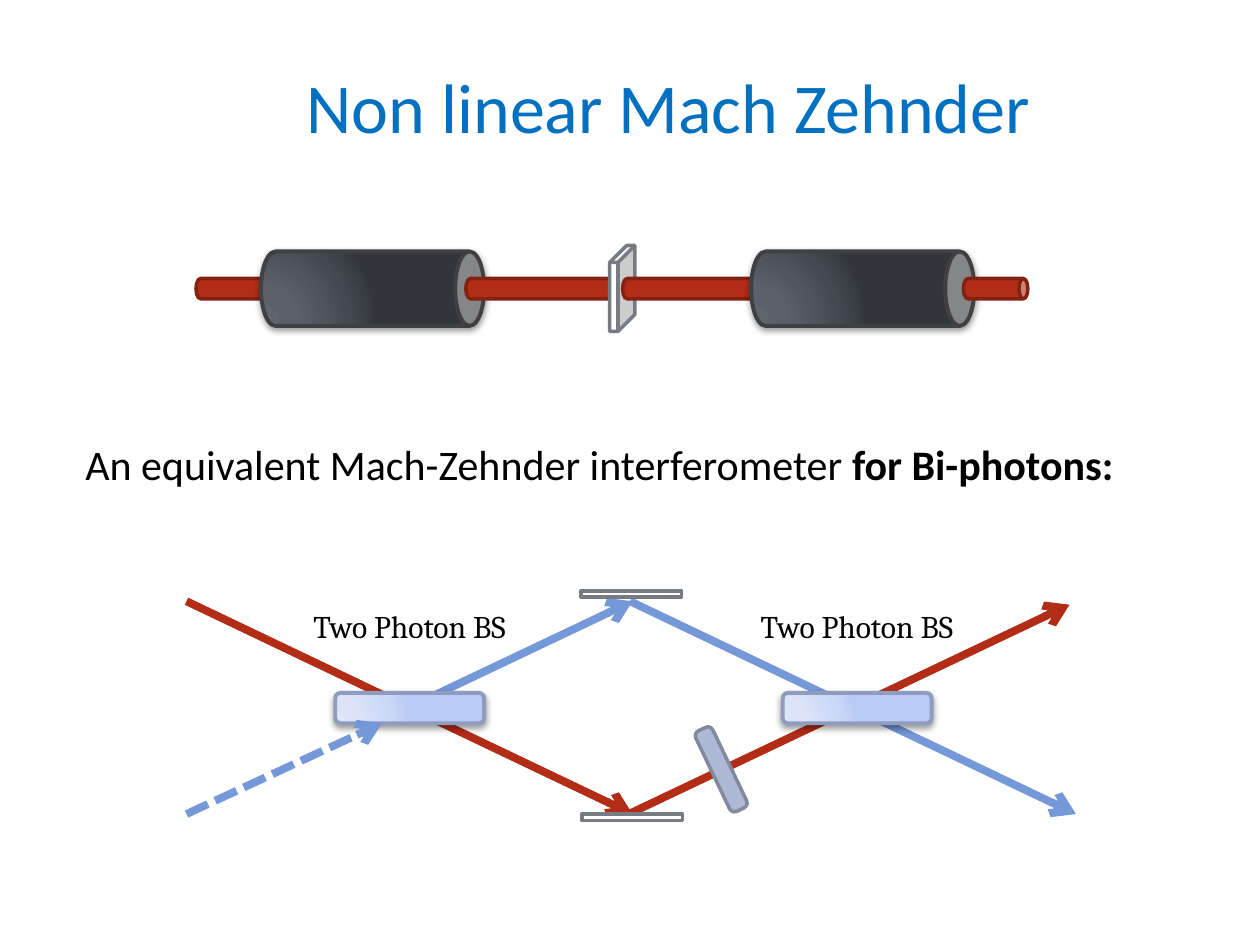
"""Build the slide on the non linear Mach Zehnder interferometer."""
import dataclasses

import lxml.etree
import pptx
import pptx.dml.color
import pptx.enum.dml
import pptx.enum.shapes
import pptx.enum.text
import pptx.oxml.ns
import pptx.util

Cm = pptx.util.Cm
SHAPE = pptx.enum.shapes.MSO_SHAPE
ALIGN = pptx.enum.text.PP_ALIGN


@dataclasses.dataclass(frozen=True)
class Theme:
    heading: str = "Calibri"
    label: str = "Cambria"
    title_size: int = 40
    body_size: int = 24
    label_size: int = 18
    title: str = "0070C0"
    text: str = "000000"
    white: str = "FFFFFF"
    red: str = "B32C16"
    red_edge: str = "842110"
    blue: str = "7598D9"
    tube_edge: str = "404040"
    splitter_edge: str = "8D9CBF"
    mirror_edge: str = "777C84"
    plate: str = "AEBAD5"
    plate_edge: str = "818A9E"
    tube: tuple = ("5E656F", "5B616B", "444951", "32363C")
    splitter: tuple = ("DEE6FA", "DBE4F9", "CAD7F7", "B8CAF5")
    stops: tuple = (0, 30, 75, 100)


def rgb(color):
    return pptx.dml.color.RGBColor.from_string(color)


def add_xml(parent, tag, **attributes):
    values = {name: str(value) for name, value in attributes.items()}
    return lxml.etree.SubElement(parent, pptx.oxml.ns.qn(tag), values)


class Deck:
    def __init__(self, theme):
        self.theme = theme
        self.prs = pptx.Presentation()
        self.prs.slide_width, self.prs.slide_height = Cm(25.4), Cm(19.05)
        self.s = self.prs.slides.add_slide(self.prs.slide_layouts[5])

    def format_runs(self, p, font, size, color):
        for r in p.runs:
            r.font.name, r.font.size = font, pptx.util.Pt(size)
            r.font.color.rgb = rgb(color)

    def title(self, text, left, top, width, height):
        sp = self.s.shapes.title
        sp.left, sp.top, sp.width, sp.height = map(Cm, (left, top, width, height))
        tf = sp.text_frame
        tf.text = text
        tf.vertical_anchor = pptx.enum.text.MSO_ANCHOR.MIDDLE
        p = tf.paragraphs[0]
        p.alignment = ALIGN.CENTER
        p._p.get_or_add_pPr().set("rtl", "1")
        self.format_runs(p, self.theme.heading, self.theme.title_size, self.theme.title)

    def text_box(self, text, left, top, width, height, align):
        tf = self.s.shapes.add_textbox(*map(Cm, (left, top, width, height))).text_frame
        tf.word_wrap = True
        tf.text = text
        tf.paragraphs[0].alignment = align
        return tf

    def statement(self, text, strong, *box):
        p = self.text_box(text, *box, ALIGN.JUSTIFY).paragraphs[0]
        p.space_before = pptx.util.Pt(6)
        r = p.add_run()
        r.text = strong
        r.font.bold = True
        self.format_runs(p, self.theme.heading, self.theme.body_size, self.theme.text)

    def label(self, text, *box):
        tf = self.text_box(text, *box, ALIGN.CENTER)
        tf.auto_size = pptx.enum.text.MSO_AUTO_SIZE.SHAPE_TO_FIT_TEXT
        self.format_runs(tf.paragraphs[0], self.theme.label, self.theme.label_size, self.theme.text)

    def shape(self, kind, left, top, width, height, fill, edge, weight=2, adjust=None, turn=0):
        sp = self.s.shapes.add_shape(kind, *map(Cm, (left, top, width, height)))
        sp.shadow.inherit = False
        sp.rotation = turn
        if adjust is not None:
            sp.adjustments[0] = adjust
        if isinstance(fill, tuple):
            self.glow(sp, fill)
        else:
            sp.fill.solid()
            sp.fill.fore_color.rgb = rgb(fill)
        sp.line.color.rgb = rgb(edge)
        sp.line.width = pptx.util.Pt(weight)
        return sp

    def glow(self, sp, colors):
        sp.fill.gradient()
        grad = sp._element.spPr.find(pptx.oxml.ns.qn("a:gradFill"))
        for child in list(grad):
            grad.remove(child)
        stops = add_xml(grad, "a:gsLst")
        for position, color in zip(self.theme.stops, colors):
            stop = add_xml(stops, "a:gs", pos=position * 1000)
            add_xml(stop, "a:srgbClr", val=color)
        circle = add_xml(grad, "a:path", path="circle")
        add_xml(circle, "a:fillToRect", l=5000, t=100000, r=120000, b=10000)

    def drop_shadow(self, sp, distance, opacity):
        effects = sp._element.spPr.find(pptx.oxml.ns.qn("a:effectLst"))
        shadow = add_xml(effects, "a:outerShdw", blurRad=pptx.util.Pt(4),
                         dist=pptx.util.Pt(distance), dir=90 * 60000, rotWithShape=0)
        color = add_xml(shadow, "a:srgbClr", val=self.theme.text)
        add_xml(color, "a:alpha", val=opacity * 1000)

    def can(self, center, axis, length, thickness, *style):
        return self.shape(SHAPE.CAN, center - thickness / 2, axis - length / 2,
                          thickness, length, *style, turn=90)

    def beam(self, center, axis, length):
        self.can(center, axis, length, 0.41, self.theme.red, self.theme.red_edge, 2, 0.44)

    def tube(self, center, axis):
        sp = self.can(center, axis, 4.5, 1.5, self.theme.tube, self.theme.tube_edge, 2.25, 0.39)
        self.drop_shadow(sp, 1.6, 42)

    def splitter(self, left, top):
        sp = self.shape(SHAPE.ROUNDED_RECTANGLE, left, top, 3, 0.61,
                        self.theme.splitter, self.theme.splitter_edge, 2.25)
        self.drop_shadow(sp, 2, 40)

    def mirror(self, left, top):
        self.shape(SHAPE.RECTANGLE, left, top, 2.03, 0.13, self.theme.white, self.theme.mirror_edge)

    def ray(self, color, start, end, dash=None):
        line = self.s.shapes.add_connector(
            pptx.enum.shapes.MSO_CONNECTOR.STRAIGHT, *map(Cm, (*start, *end)))
        line.line.color.rgb = rgb(color)
        line.line.width = pptx.util.Pt(4.5)
        if dash is not None:
            line.line.dash_style = dash
        add_xml(line.line._get_or_add_ln(), "a:tailEnd", type="arrow")
        add_xml(line._element.spPr, "a:effectLst")


def main():
    theme = Theme()
    deck = Deck(theme)
    deck.title("Non linear Mach Zehnder ", 2.49, 0.53, 21.62, 3.18)
    deck.statement("An equivalent Mach-Zehnder interferometer ", "for Bi-photons:",
                   1.47, 8.71, 22.61, 1.52)

    axis = 5.82
    deck.beam(4.85, axis, 1.8)
    deck.tube(7.51, axis)
    deck.beam(10.95, axis, 3.12)
    deck.shape(SHAPE.CUBE, 12.29, 4.95, 0.51, 1.73, theme.white, theme.mirror_edge, 2, 0.67)
    deck.beam(14.05, axis, 3)
    deck.tube(17.39, axis)
    deck.beam(20.07, axis, 1.3)

    high, low, middle = 12.12, 16.41, 14.58
    deck.ray(theme.red, (3.76, high), (12.75, low))
    deck.ray(theme.blue, (12.7, high), (21.69, low))
    deck.ray(theme.blue, (7.57, middle), (12.75, high))
    deck.ray(theme.red, (12.57, 16.46), (21.56, 12.19))
    arms = (0, 9.02)
    for offset in arms:
        deck.splitter(6.76 + offset, 13.97)
    deck.ray(theme.blue, (3.76, low), (7.7, middle), pptx.enum.dml.MSO_LINE.SQUARE_DOT)
    deck.mirror(11.71, 11.91)
    deck.mirror(11.73, low)
    for offset in arms:
        deck.label("Two Photon BS", 6.02 + offset, high, 4.47, 1.8)
    deck.shape(SHAPE.ROUNDED_RECTANGLE, 14.35, 14.61, 0.38, 1.8,
               theme.plate, theme.plate_edge, 2, 0.29, 334.5)
    deck.prs.save("out.pptx")


if __name__ == "__main__":
    main()
